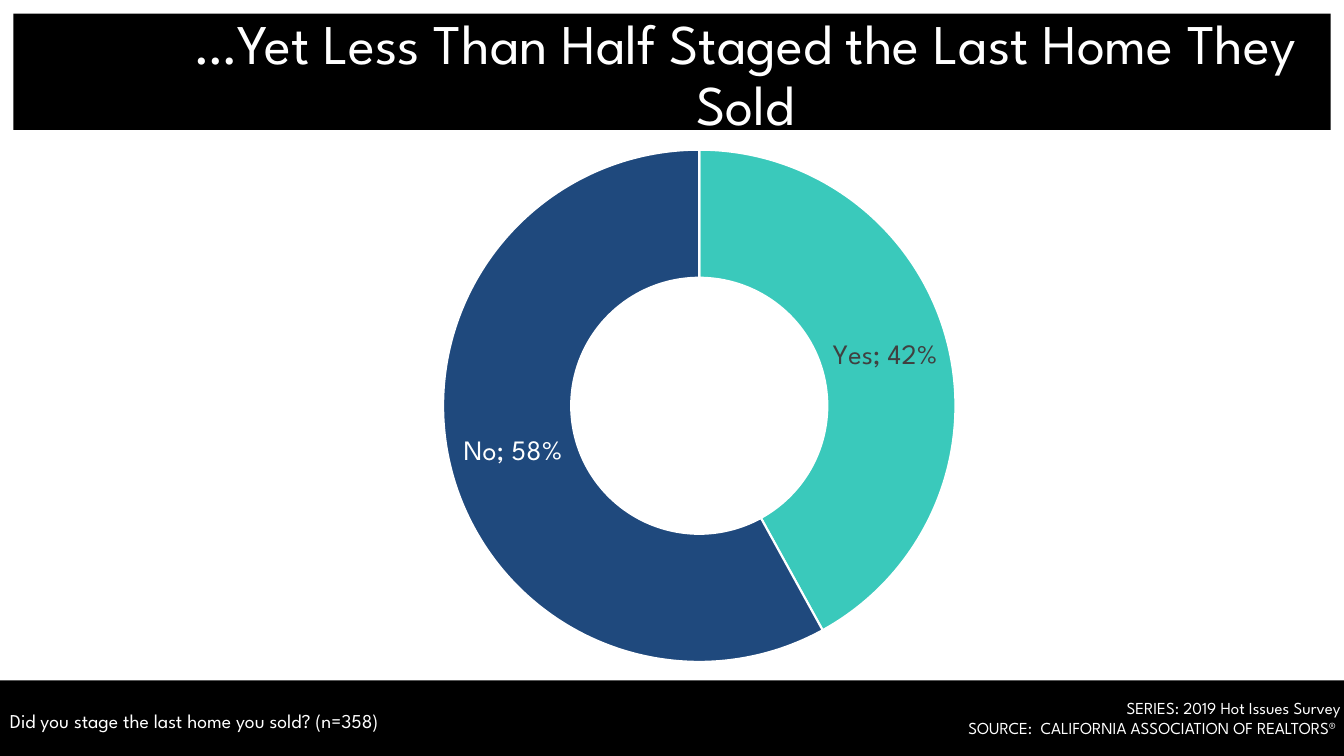
import pptx
import pptx.chart.data
import pptx.dml.color
import pptx.enum.chart
import pptx.enum.shapes
import pptx.enum.text
import pptx.oxml
import pptx.oxml.ns
import pptx.util

ALIGN = pptx.enum.text.PP_ALIGN
FIT = pptx.enum.text.MSO_AUTO_SIZE
NS = pptx.oxml.ns.nsdecls("c")


def color(value):
    return pptx.dml.color.RGBColor.from_string(value)


class SlideBuilder:
    font = "League Spartan"
    black, white, gray = "000000", "FFFFFF", "404040"
    teal, navy = "3AC9BB", "1F497D"

    def __init__(self, prs):
        self.width, self.height = prs.slide_width, prs.slide_height
        self.s = prs.slides.add_slide(prs.slide_layouts[5])

    def box(self, x, y, w, h):
        return (int(x * self.width), int(y * self.height),
                int(w * self.width), int(h * self.height))

    def style(self, font, size, value):
        font.name = self.font
        font.size = pptx.util.Pt(size)
        font.color.rgb = color(value)

    def bar(self, *share):
        sp = self.s.shapes.add_shape(
            pptx.enum.shapes.MSO_SHAPE.RECTANGLE, *self.box(*share))
        sp.shadow.inherit = False
        sp.fill.solid()
        sp.fill.fore_color.rgb = color(self.black)
        sp.line.fill.background()

    def fill_text(self, sp, lines, size, align, wrap=True, fit=FIT.SHAPE_TO_FIT_TEXT):
        tf = sp.text_frame
        tf.word_wrap = wrap
        tf.auto_size = fit
        tf.vertical_anchor = pptx.enum.text.MSO_ANCHOR.TOP
        for i, line in enumerate(lines):
            p = tf.add_paragraph() if i else tf.paragraphs[0]
            p.alignment = align
            r = p.add_run()
            r.text = line
            self.style(r.font, size, self.white)
        return tf

    def title(self, share, line, size):
        sp = self.s.shapes.title
        sp.left, sp.top, sp.width, sp.height = self.box(*share)
        sp.element.getparent().append(sp.element)
        tf = self.fill_text(sp, [line], size, ALIGN.CENTER, fit=FIT.NONE)
        tf.paragraphs[0].line_spacing = 0.9

    def text(self, share, lines, size, align=ALIGN.LEFT, wrap=True):
        sp = self.s.shapes.add_textbox(*self.box(*share))
        self.fill_text(sp, lines, size, align, wrap)

    def label_parts(self, labels):
        labels.find(pptx.oxml.ns.qn("c:showCatName")).set("val", "1")
        labels.find(pptx.oxml.ns.qn("c:showPercent")).set("val", "0")
        labels.find(pptx.oxml.ns.qn("c:showBubbleSize")).addnext(
            pptx.oxml.parse_xml(f"<c:separator {NS}>; </c:separator>"))

    def doughnut(self, share, slices, hole, plot_height):
        data = pptx.chart.data.CategoryChartData(number_format="0%")
        data.categories = [name for name, *_ in slices]
        data.add_series("Series 1", [value for _, value, *_ in slices])
        frame = self.s.shapes.add_chart(
            pptx.enum.chart.XL_CHART_TYPE.DOUGHNUT, *self.box(*share), data)
        chart = frame.chart
        chart.has_legend = False
        chart.has_title = False
        self.style(chart.font, 10, self.black)
        plot = chart.plots[0]
        plot.vary_by_categories = True
        series = plot.series[0]
        labels = series.data_labels
        labels.show_value = True
        labels.show_category_name = True
        labels.number_format = "0%"
        labels.number_format_is_linked = False
        self.style(labels.font, 20, self.gray)
        for i, (_, _, fill, ink) in enumerate(slices):
            point = series.points[i]
            point.format.fill.solid()
            point.format.fill.fore_color.rgb = color(fill)
            point.format.line.color.rgb = color(self.white)
            point.format.line.width = pptx.util.Pt(1.5)
            self.style(point.data_label.font, 20, ink)
        root = chart.element
        for label in root.xpath(".//c:ser/c:dLbls/c:dLbl"):
            self.label_parts(label)
        self.label_parts(root.xpath(".//c:ser/c:dLbls")[0])
        root.xpath(".//c:holeSize")[0].set("val", str(hole))
        plot_width = plot_height * frame.height / frame.width
        sizes = {"x": (1 - plot_width) / 2, "y": (1 - plot_height) / 2,
                 "w": plot_width, "h": plot_height}
        parts = "".join(f'<c:{k} val="{v:.3f}"/>' for k, v in sizes.items())
        area = root.xpath(".//c:plotArea")[0]
        for old in area.xpath("c:layout"):
            area.remove(old)
        area.insert(0, pptx.oxml.parse_xml(
            f'<c:layout {NS}><c:manualLayout><c:layoutTarget val="inner"/>'
            f'<c:xMode val="edge"/><c:yMode val="edge"/>{parts}'
            f'</c:manualLayout></c:layout>'))


def main():
    prs = pptx.Presentation()
    prs.slide_width = pptx.util.Inches(13.33)
    prs.slide_height = pptx.util.Inches(7.5)
    b = SlideBuilder(prs)
    b.bar(0, 0.9, 1, 0.1)
    b.bar(0.01, 0.018, 0.98, 0.154)
    b.doughnut((0.194, 0.178, 0.652, 0.717),
               [("Yes", 0.42, b.teal, b.gray), ("No", 0.58, b.navy, b.white)],
               hole=58, plot_height=0.945)
    b.text((0.672, 0.916, 0.333, 0.067),
           ["SERIES: 2019 Hot Issues Survey",
            "SOURCE:  CALIFORNIA ASSOCIATION OF REALTORS® "],
           12, ALIGN.RIGHT, wrap=False)
    b.title((0.128, 0.015, 0.853, 0.09),
            "…Yet Less Than Half Staged the Last Home They Sold", 40)
    b.text((0, 0.931, 0.359, 0.045),
           ["Did you stage the last home you sold? (n=358)"], 14)
    prs.save("out.pptx")


if __name__ == "__main__":
    main()
